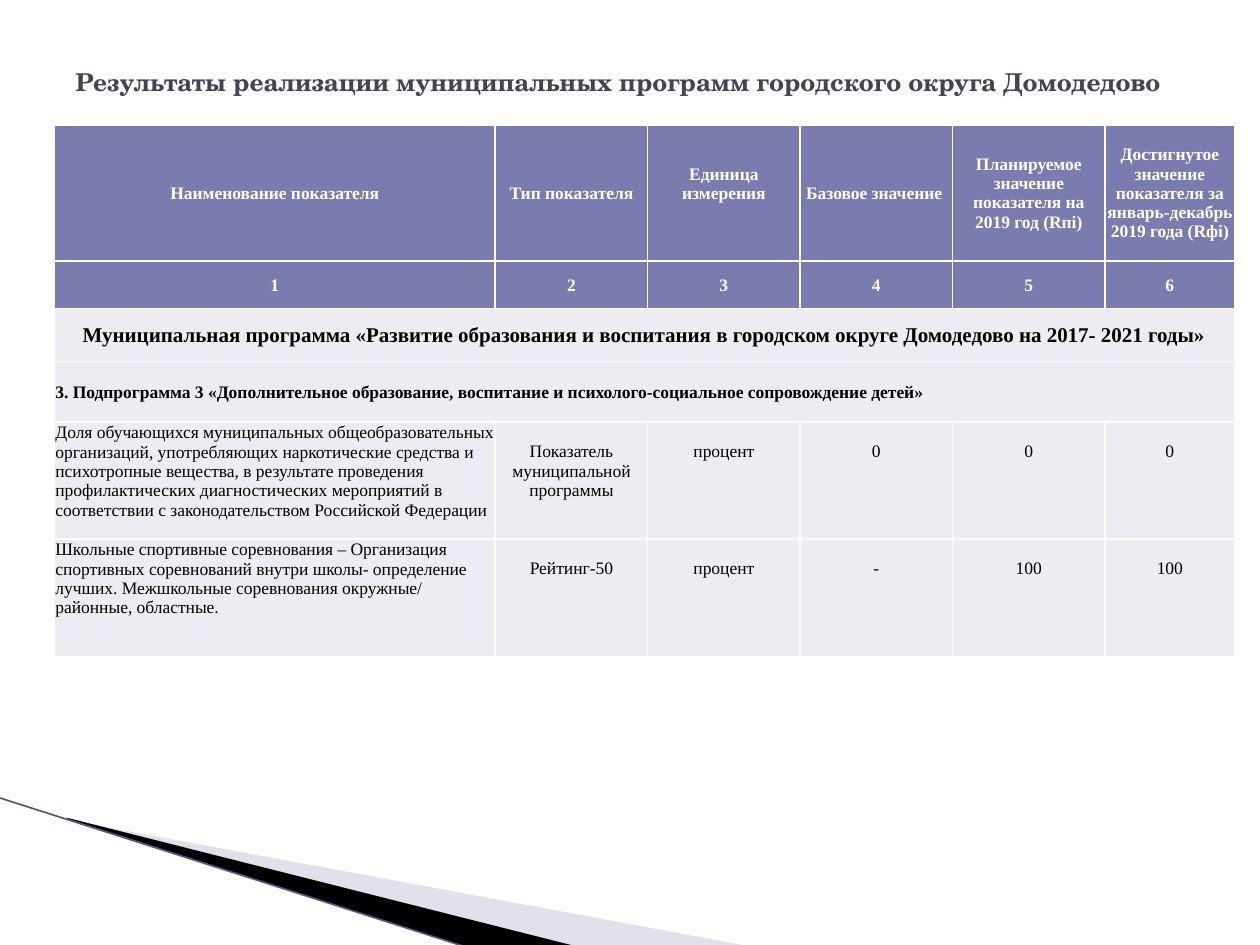
import pptx
import pptx.util
import pptx.dml.color
import pptx.enum.text
import pptx.enum.shapes
import pptx.oxml
import pptx.oxml.ns
from lxml import etree

Inches, Pt = pptx.util.Inches, pptx.util.Pt
ALIGN, ANCHOR = pptx.enum.text.PP_ALIGN, pptx.enum.text.MSO_ANCHOR

# Content
TITLE = "Результаты реализации муниципальных программ городского округа Домодедово"
HEADERS = [
    "Наименование показателя", "Тип показателя", "Единица измерения", "Базовое значение ",
    "Планируемое значение показателя на 2019 год (Rпi)",
    "Достигнутое значение показателя за январь-декабрь 2019 года (Rфi)",
]
NUMBERS = [str(number) for number in range(1, 7)]
PROGRAMME = ("Муниципальная программа «Развитие образования и воспитания "
             "в городском округе Домодедово на 2017- 2021 годы»")
SUBPROGRAMME = ("3. Подпрограмма 3 «Дополнительное образование, воспитание "
                "и психолого-социальное сопровождение детей»")
INDICATORS = [
    ["Доля обучающихся муниципальных общеобразовательных организаций, употребляющих "
     "наркотические средства и психотропные вещества, в результате проведения "
     "профилактических диагностических мероприятий в соответствии с законодательством "
     "Российской Федерации",
     "Показатель муниципальной программы", "процент", "0", "0", "0"],
    ["Школьные спортивные соревнования – Организация спортивных соревнований внутри школы- "
     "определение лучших. Межшкольные соревнования окружные/ районные, областные.",
     "Рейтинг-50", "процент", "-", "100", "100"],
]

# Look and grid, in inches
COLORS = {"title": "424456", "header": "7A7BAE", "body": "ECECF2", "white": "FFFFFF",
          "black": "000000", "pale": "B6B6D1", "edge": "53548A"}
COLUMNS = [3.5] + [1.21] * 4 + [1.03]
ROWS = [1.08, 0.38, 0.42, 0.48, 0.93, 0.93]
TABLE_LEFT, TABLE_TOP = 0.43, 0.99
LINE_GAP = 0.15
WEDGES = [
    ("pale", 40, [(0.55, 6.51), (5.95, 7.51), (4.56, 7.51), (0.55, 6.5)]),
    ("black", 100, [(0.53, 6.49), (4.57, 7.51), (3.72, 7.52), (0.54, 6.5)]),
]
EDGE = [(-0.01, 6.33), (3.71, 7.52)]


def rgb(name):
    return pptx.dml.color.RGBColor.from_string(COLORS[name])


def format_text(frame, size, color, bold, font="Times New Roman", align=ALIGN.CENTER):
    for para in frame.paragraphs:
        para.alignment = align
        for span in para.runs:
            span.font.name, span.font.size, span.font.bold = font, Pt(size), bold
            span.font.color.rgb = rgb(color)


def add_borders(cell):
    properties = cell._tc.get_or_add_tcPr()
    for index, side in enumerate(("lnL", "lnR", "lnT", "lnB")):
        properties.insert(index, pptx.oxml.parse_xml(
            f'<a:{side} {pptx.oxml.ns.nsdecls("a")} w="12700"><a:solidFill>'
            f'<a:srgbClr val="{COLORS["white"]}"/></a:solidFill></a:{side}>'))


def fill_cell(cell, text, fill="body", color="black", size=10, bold=False,
              align=ALIGN.CENTER, anchor=ANCHOR.MIDDLE, above=0.01, below=0):
    cell.margin_left = cell.margin_right = Inches(0.01)
    cell.margin_top, cell.margin_bottom = Inches(above), Inches(below)
    cell.vertical_anchor = anchor
    cell.fill.solid()
    cell.fill.fore_color.rgb = rgb(fill)
    cell.text_frame.text = text
    format_text(cell.text_frame, size, color, bold, align=align)


def add_corner(page):
    for color, opacity, corners in WEDGES:
        points = [(Inches(x), Inches(y)) for x, y in corners]
        builder = page.shapes.build_freeform(*points[0])
        builder.add_line_segments(points[1:], close=True)
        wedge = builder.convert_to_shape()
        wedge.shadow.inherit = False
        wedge.line.fill.background()
        wedge.fill.solid()
        wedge.fill.fore_color.rgb = rgb(color)
        if opacity < 100:
            tint = wedge.fill._xPr.find(".//" + pptx.oxml.ns.qn("a:srgbClr"))
            etree.SubElement(tint, pptx.oxml.ns.qn("a:alpha"), val=str(opacity * 1000))
    ends = [Inches(value) for point in EDGE for value in point]
    edge = page.shapes.add_connector(pptx.enum.shapes.MSO_CONNECTOR.STRAIGHT, *ends)
    edge.line.color.rgb = rgb("edge")
    edge.line.width = Pt(0.95)
    etree.SubElement(edge._element.spPr, pptx.oxml.ns.qn("a:effectLst"))


def add_title(page):
    box = page.shapes.add_textbox(Inches(0.5), Inches(0.3), Inches(9), Inches(0.69))
    box.text_frame.word_wrap = True
    box.text_frame.vertical_anchor = ANCHOR.MIDDLE
    box.text_frame.text = TITLE
    format_text(box.text_frame, 14, "title", True, "TeX Gyre Schola", ALIGN.LEFT)


def add_results(page):
    table = page.shapes.add_table(
        len(ROWS), len(COLUMNS), Inches(TABLE_LEFT), Inches(TABLE_TOP),
        Inches(sum(COLUMNS)), Inches(sum(ROWS))).table
    for column, width in zip(table.columns, COLUMNS):
        column.width = Inches(width)
    for row, height in zip(table.rows, ROWS):
        row.height = Inches(height)

    # Two header rows; the unit heading sits one line higher
    for row, texts in enumerate((HEADERS, NUMBERS)):
        for column, text in enumerate(texts):
            raised = row == 0 and column == 2
            fill_cell(table.cell(row, column), text, "header", "white", bold=True,
                      below=LINE_GAP if raised else 0)

    # Full-width programme rows
    for row, text, size, align in ((2, PROGRAMME, 12, ALIGN.CENTER),
                                   (3, SUBPROGRAMME, 10, ALIGN.LEFT)):
        table.cell(row, 0).merge(table.cell(row, len(COLUMNS) - 1))
        fill_cell(table.cell(row, 0), text, size=size, bold=True, align=align)

    # Indicators; values start one line below the name
    for row, texts in enumerate(INDICATORS, start=4):
        for column, text in enumerate(texts):
            fill_cell(table.cell(row, column), text, anchor=ANCHOR.TOP,
                      align=ALIGN.CENTER if column else ALIGN.LEFT,
                      above=0.01 + (LINE_GAP if column else 0))

    for cell in table.iter_cells():
        add_borders(cell)


def main():
    deck = pptx.Presentation()
    deck.slide_width, deck.slide_height = Inches(10), Inches(7.5)
    page = deck.slides.add_slide(deck.slide_layouts[6])
    add_corner(page)
    add_title(page)
    add_results(page)
    deck.save("out.pptx")


if __name__ == "__main__":
    main()
